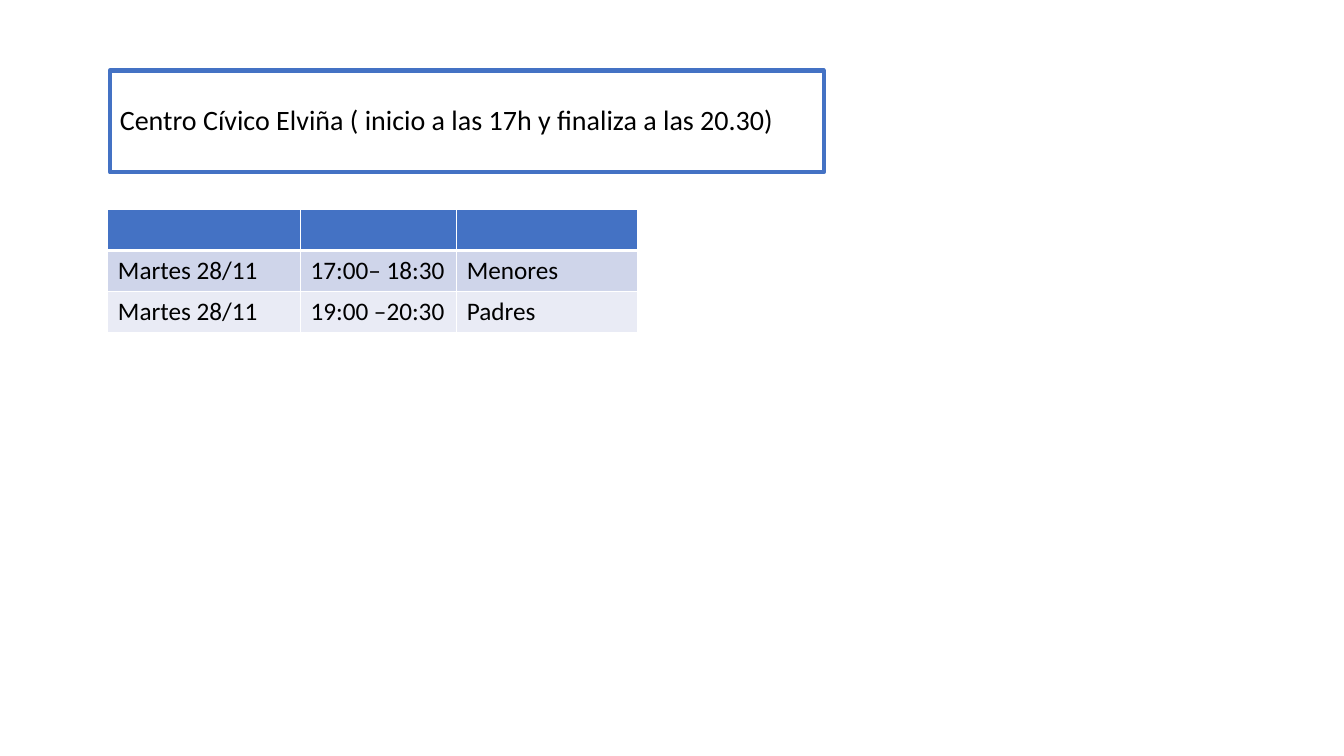
from dataclasses import dataclass

from lxml.etree import SubElement
from pptx import Presentation
from pptx.dml.color import RGBColor
from pptx.enum.shapes import MSO_SHAPE
from pptx.enum.text import MSO_ANCHOR, PP_ALIGN
from pptx.oxml.ns import qn
from pptx.util import Inches, Pt


@dataclass(frozen=True)
class Theme:
    """Colours, font and sizes of the slide."""
    font: str = "Calibri"
    text: str = "000000"
    paper: str = "FFFFFF"
    accent: str = "4472C4"
    bands: tuple = ("CFD5EA", "E9EBF5")
    title_size: int = 20
    table_size: int = 18
    frame_width: int = 3
    rule_width: int = 1


THEME = Theme()
COLUMN_WIDTHS = (1.91, 1.55, 1.79)
SCHEDULE = (
    ("", "", ""),
    ("Martes 28/11", "17:00– 18:30", "Menores"),
    ("Martes 28/11", "19:00 –20:30", "Padres"),
)


def paint(fill, colour):
    """Give a fill one solid colour."""
    fill.solid()
    fill.fore_color.rgb = RGBColor.from_string(colour)


def write(frame, text, size):
    """Set the text of a frame in the theme font."""
    frame.text = text
    paragraph = frame.paragraphs[0]
    paragraph.alignment = PP_ALIGN.LEFT
    for run in paragraph.runs:
        run.font.name = THEME.font
        run.font.size = Pt(size)
        run.font.bold = False
        run.font.color.rgb = RGBColor.from_string(THEME.text)


def rule_cell(cell, widths):
    """Draw the left, right, top and bottom rules of a cell."""
    properties = cell._tc.get_or_add_tcPr()
    for side, width in zip("LRTB", widths):
        rule = SubElement(properties, qn(f"a:ln{side}"), w=str(Pt(width)))
        solid = SubElement(rule, qn("a:solidFill"))
        SubElement(solid, qn("a:srgbClr"), val=THEME.paper)


def add_venue(slide, left, top, width, height):
    """Place the framed venue title."""
    venue = slide.shapes.add_shape(
        MSO_SHAPE.RECTANGLE, Inches(left), Inches(top), Inches(width), Inches(height))
    venue.shadow.inherit = False
    paint(venue.fill, THEME.paper)
    paint(venue.line.fill, THEME.accent)
    venue.line.width = Pt(THEME.frame_width)
    frame = venue.text_frame
    frame.word_wrap = True
    frame.vertical_anchor = MSO_ANCHOR.MIDDLE
    write(frame, "Centro Cívico Elviña ( inicio a las 17h y finaliza a las 20.30)",
          THEME.title_size)
    frame.paragraphs[0].line_spacing = 0.9


def add_schedule(slide, left, top, width, height):
    """Place the schedule table with its header and banded rows."""
    schedule = slide.shapes.add_table(
        len(SCHEDULE), len(COLUMN_WIDTHS),
        Inches(left), Inches(top), Inches(width), Inches(height)).table
    for column, column_width in zip(schedule.columns, COLUMN_WIDTHS):
        column.width = Inches(column_width)
    thin, thick = THEME.rule_width, THEME.frame_width
    for row, entries in enumerate(SCHEDULE):
        colour = THEME.bands[(row - 1) % 2] if row else THEME.accent
        for column, entry in enumerate(entries):
            cell = schedule.cell(row, column)
            rule_cell(cell, (thin, thin, thick if row == 1 else thin,
                             thin if row else thick))
            paint(cell.fill, colour)
            write(cell.text_frame, entry, THEME.table_size)


def main():
    """Build and save the slide."""
    deck = Presentation()
    deck.slide_width, deck.slide_height = Inches(13.33), Inches(7.5)
    slide = deck.slides.add_slide(deck.slide_layouts[6])
    paint(slide.background.fill, THEME.paper)
    add_venue(slide, 1.09, 0.7, 7.08, 1.01)
    add_schedule(slide, 1.07, 2.08, sum(COLUMN_WIDTHS), 1.22)
    deck.save("out.pptx")


if __name__ == "__main__":
    main()
